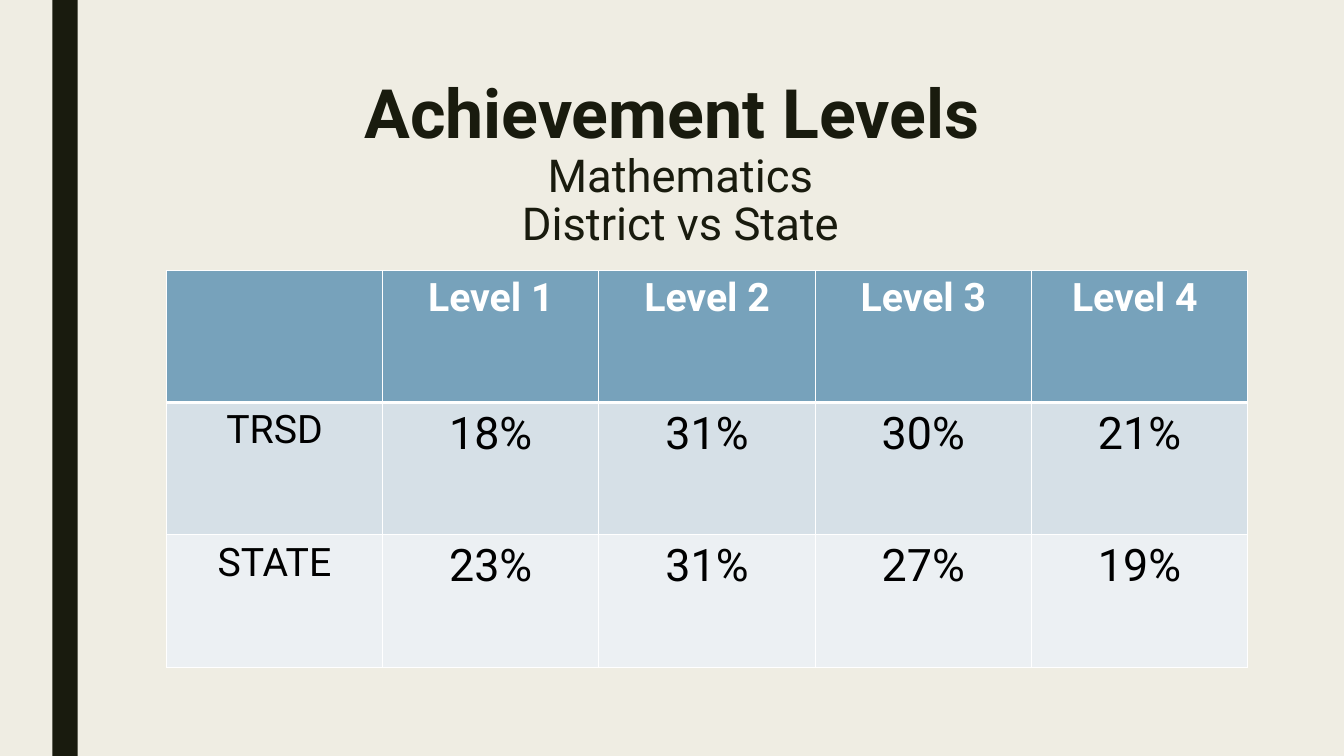
from lxml import etree
from pptx import Presentation
from pptx.dml.color import RGBColor
from pptx.enum.shapes import MSO_SHAPE
from pptx.enum.text import MSO_ANCHOR, MSO_AUTO_SIZE, PP_ALIGN
from pptx.oxml.ns import qn
from pptx.util import Inches, Pt

RECTANGLE = MSO_SHAPE.RECTANGLE
CENTER = PP_ALIGN.CENTER
TOP = MSO_ANCHOR.TOP
NO_AUTOFIT = MSO_AUTO_SIZE.NONE

CREAM = RGBColor(0xEF, 0xED, 0xE3)
DARK = RGBColor(0x19, 0x1B, 0x0E)
BLUE = RGBColor(0x77, 0xA2, 0xBB)
PALE_BLUE = RGBColor(0xD6, 0xE0, 0xE7)
PALEST_BLUE = RGBColor(0xEC, 0xF0, 0xF3)
WHITE = RGBColor(0xFF, 0xFF, 0xFF)
BLACK = RGBColor(0, 0, 0)
FONT = "Roboto"

COLUMN_WIDTH = Inches(2.146)
ROW_HEIGHT = Inches(1.313)
TITLE_LINES = [
    ("Achievement Levels ", 48.6, True),
    ("Mathematics", 32.4, False),
    ("District vs State", 32.4, False),
]
LEVELS = [
    ["", "Level 1", "Level 2", "Level 3", "Level 4 "],
    ["TRSD", "18%", "31%", "30%", "21%"],
    ["STATE", "23%", "31%", "27%", "19%"],
]
ROW_FILLS = [BLUE, PALE_BLUE, PALEST_BLUE]


def add_span(para, text, size, color, bold):
    span = para.add_run()
    span.text = text
    span.font.name = FONT
    span.font.size = Pt(size)
    span.font.color.rgb = color
    span.font.bold = bold


def add_borders(cell, widths):
    """Draw white borders; widths in points for left, right, top, bottom."""
    properties = cell._tc.get_or_add_tcPr()
    for index, (side, width) in enumerate(zip("LRTB", widths)):
        line = etree.Element(qn(f"a:ln{side}"), w=str(Pt(width)))
        fill = etree.SubElement(line, qn("a:solidFill"))
        etree.SubElement(fill, qn("a:srgbClr"), val=str(WHITE))
        properties.insert(index, line)


deck = Presentation()
deck.slide_width = Inches(13.333)
deck.slide_height = Inches(7.5)
page = deck.slides.add_slide(deck.slide_layouts[5])
page.background.fill.solid()
page.background.fill.fore_color.rgb = CREAM

# Side bar
bar = page.shapes.add_shape(RECTANGLE, Inches(0.52), 0, Inches(0.25), deck.slide_height)
bar.shadow.inherit = False
bar.fill.solid()
bar.fill.fore_color.rgb = DARK
bar.line.fill.background()

# Title
title = page.shapes.title
title.left, title.top = Inches(1.5), Inches(0.75)
title.width, title.height = Inches(10.5), Inches(1.62)
title.text_frame.word_wrap = True
title.text_frame.auto_size = NO_AUTOFIT
title.text_frame.vertical_anchor = TOP
para = title.text_frame.paragraphs[0]
para.alignment = CENTER
para.line_spacing = 0.89
for number, (text, size, bold) in enumerate(TITLE_LINES):
    if number:
        para.add_line_break()
    add_span(para, text, size, DARK, bold)

# Achievement table
table = page.shapes.add_table(
    len(LEVELS), len(LEVELS[0]), Inches(1.65), Inches(2.68),
    COLUMN_WIDTH * len(LEVELS[0]), ROW_HEIGHT * len(LEVELS),
).table
for column in table.columns:
    column.width = COLUMN_WIDTH
for row_index, values in enumerate(LEVELS):
    table.rows[row_index].height = ROW_HEIGHT
    header = row_index == 0
    for column_index, value in enumerate(values):
        cell = table.cell(row_index, column_index)
        cell.fill.solid()
        cell.fill.fore_color.rgb = ROW_FILLS[row_index]
        add_borders(cell, (1, 1, 3 if row_index == 1 else 1, 3 if header else 1))
        if value:
            para = cell.text_frame.paragraphs[0]
            para.alignment = CENTER
            size = 28 if header or column_index == 0 else 32
            add_span(para, value, size, WHITE if header else BLACK, header)

deck.save("out.pptx")
